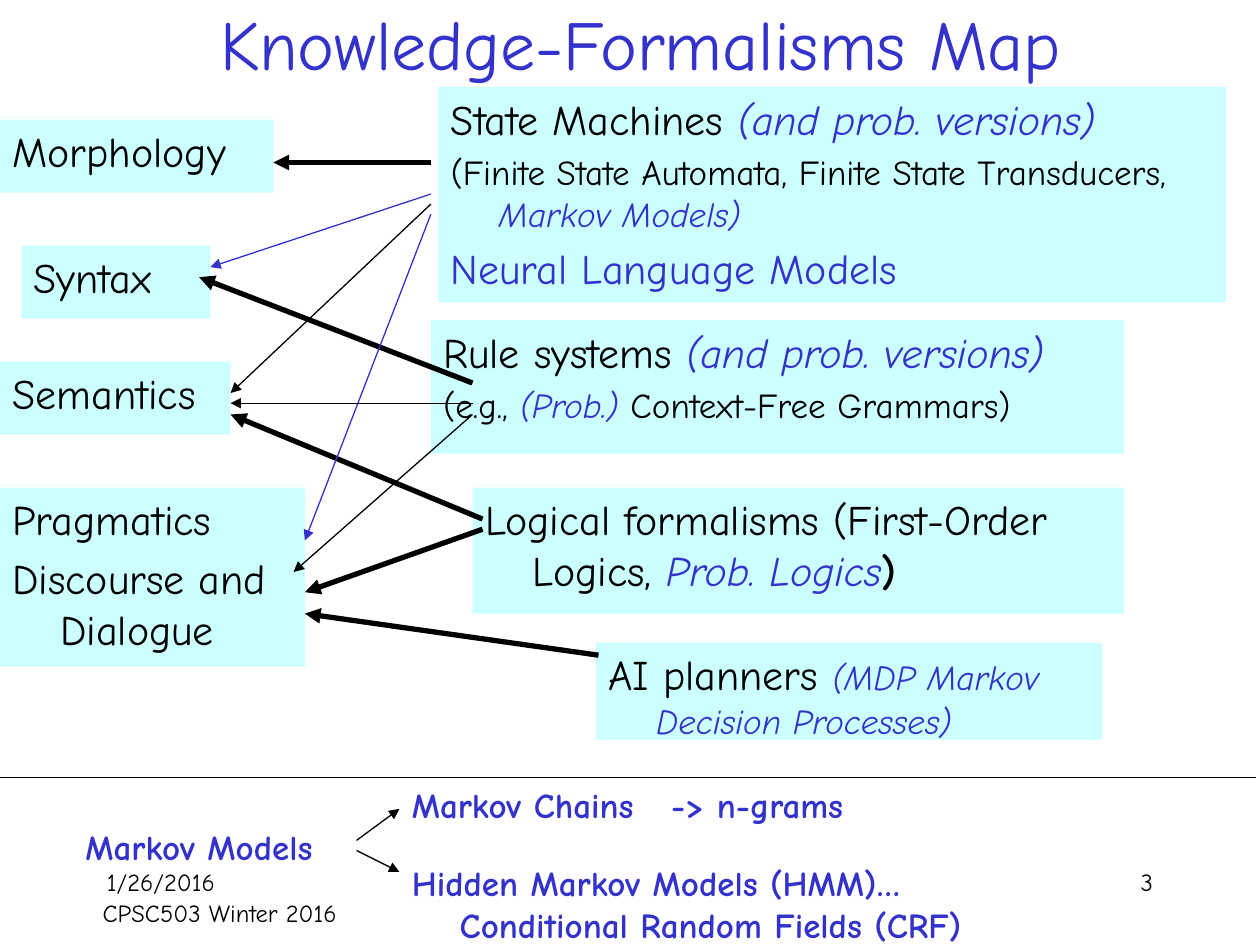
from typing import NamedTuple

from lxml import etree
from pptx import Presentation
from pptx.dml.color import RGBColor
from pptx.enum.shapes import MSO_CONNECTOR, MSO_SHAPE
from pptx.enum.text import MSO_ANCHOR, MSO_AUTO_SIZE, PP_ALIGN
from pptx.oxml.ns import qn
from pptx.util import Inches, Pt

LINE = MSO_CONNECTOR.STRAIGHT
RECT = MSO_SHAPE.RECTANGLE
TOP, BOTTOM = MSO_ANCHOR.TOP, MSO_ANCHOR.BOTTOM
NO_FIT = MSO_AUTO_SIZE.NONE
LEFT, CENTER, RIGHT = PP_ALIGN.LEFT, PP_ALIGN.CENTER, PP_ALIGN.RIGHT

BLACK = RGBColor(0x00, 0x00, 0x00)
BLUE = RGBColor(0x33, 0x33, 0xCC)
CYAN = RGBColor(0xCC, 0xFF, 0xFF)
FONT = "Comic Neue"
HANG = Inches(0.38)
THIN, THICK = 0.75, 3


class Run(NamedTuple):
    text: str
    size: float = 24
    color: RGBColor = BLACK
    italic: bool = False
    bold: bool = False


class Box(NamedTuple):
    at: tuple
    paras: list


class Label(NamedTuple):
    at: tuple
    text: str
    align: PP_ALIGN


class Arrow(NamedTuple):
    start: tuple
    end: tuple
    width: float = THIN
    color: RGBColor = BLACK
    head: bool = True


def tilt(text: str, size: float = 24) -> Run:
    """Blue italic run."""
    return Run(text, size, BLUE, italic=True)


LOGIC = Box((3.75, 3.87, 5.17, 1), [
    [Run("Logical formalisms (First-Order Logics, "), tilt("Prob. Logics"),
     Run(")", bold=True)]])

BOXES = [
    Box((3.42, 2.54, 5.5, 1.06), [
        [Run("Rule systems "), tilt("(and prob. versions)")],
        [Run("(e.g., ", 20), tilt("(Prob.)", 20),
         Run(" Context-Free Grammars)", 20)]]),
    Box((3.48, 0.69, 6.25, 1.71), [
        [Run("State Machines "), tilt("(and prob. versions)")],
        [Run("(Finite State Automata, Finite State Transducers, ", 20),
         tilt("Markov Models)", 20)],
        [Run("Neural Language Models", color=BLUE)]]),
    Box((0, 0.95, 2.17, 0.58), [[Run("Morphology")]]),
    Box((0.17, 1.95, 1.5, 0.58), [[Run("Syntax")]]),
    Box((0, 3.87, 2.42, 1.42), [
        [Run("Pragmatics")], [Run("Discourse and Dialogue")]]),
    Box((0, 2.87, 1.83, 0.58), [[Run("Semantics")]]),
    Box((4.73, 5.1, 4.02, 0.77), [
        [Run("AI planners "), tilt("(MDP Markov Decision Processes)", 20)]]),
]

NOTES = [
    Box(at, [[Run(text, 20, BLUE, bold=True)]]) for at, text in [
        ((0.58, 6.5, 2.33, 0.58), "Markov Models"),
        ((3.17, 6.17, 4.75, 0.58), "Markov Chains   -> n-grams"),
        ((3.17, 6.79, 5.08, 0.58),
         "Hidden Markov Models (HMM)… Conditional Random Fields (CRF)"),
    ]
]

LABELS = [
    Label((0.75, 6.83, 2.08, 0.5), "1/26/2016", LEFT),
    Label((0.16, 7.08, 3.17, 0.5), "CPSC503 Winter 2016", CENTER),
    Label((7.17, 6.83, 2.08, 0.5), "3", RIGHT),
]

ARROWS = [
    Arrow((3.42, 1.29), (2.17, 1.29), THICK),
    Arrow((3.75, 3.04), (1.58, 2.2), THICK),
    Arrow((3.83, 4.12), (1.83, 3.29), THICK),
    Arrow((3.83, 4.2), (2.42, 4.7), THICK),
    Arrow((4.75, 5.2), (2.42, 4.87), THICK),
    Arrow((3.42, 1.62), (1.83, 3.12)),
    Arrow((3.42, 1.7), (2.42, 4.29), color=BLUE),
    Arrow((3.42, 1.54), (1.67, 2.12), color=BLUE),
    Arrow((3.75, 3.2), (1.83, 3.2)),
    Arrow((3.75, 3.29), (2.33, 4.54)),
    Arrow((2.83, 6.67), (3.17, 6.42)),
    Arrow((2.83, 6.75), (3.17, 6.92)),
    Arrow((-0.03, 6.17), (9.97, 6.17), head=False),
]


def put(item, values: dict) -> None:
    """Set each named attribute of the item."""
    for name, value in values.items():
        setattr(item, name, value)


def place(shape, at: tuple) -> None:
    names = ("left", "top", "width", "height")
    put(shape, dict(zip(names, map(Inches, at))))


def write(shape, paras: list, align: PP_ALIGN = LEFT,
          hang: bool = False, anchor: MSO_ANCHOR = TOP) -> None:
    frame = shape.text_frame
    put(frame, {"word_wrap": True, "auto_size": NO_FIT,
                "vertical_anchor": anchor})
    for i, runs in enumerate(paras):
        para = frame.add_paragraph() if i else frame.paragraphs[0]
        para.alignment = align
        if hang:
            para.space_before = Pt(0.2 * runs[0].size)
            props = para._p.get_or_add_pPr()
            props.set("marL", str(HANG))
            props.set("indent", str(-HANG))
            etree.SubElement(props, qn("a:buNone"))
        for run in runs:
            part = para.add_run()
            part.text = run.text
            put(part.font, {"name": FONT, "size": Pt(run.size),
                            "italic": run.italic, "bold": run.bold})
            part.font.color.rgb = run.color


def paint(shape, box: Box) -> None:
    """Fill a shape with cyan and write its text."""
    shape.fill.solid()
    shape.fill.fore_color.rgb = CYAN
    shape.line.fill.background()
    write(shape, box.paras, hang=True)


def draw_arrow(shapes, arrow: Arrow) -> None:
    ends = map(Inches, arrow.start + arrow.end)
    link = shapes.add_connector(LINE, *ends)
    link.line.width = Pt(arrow.width)
    link.line.color.rgb = arrow.color
    if arrow.head:
        etree.SubElement(link.line._get_or_add_ln(), qn("a:tailEnd"),
                         type="triangle")
    etree.SubElement(link._element.spPr, qn("a:effectLst"))


def main() -> None:
    deck = Presentation()
    put(deck, {"slide_width": Inches(10), "slide_height": Inches(7.5)})
    slide = deck.slides.add_slide(deck.slide_layouts[1])
    shapes = slide.shapes

    title, body = shapes.title, slide.placeholders[1]
    place(title, (1, 0.25, 8.17, 0.67))
    put(title.text_frame, {"margin_top": 0, "margin_bottom": Inches(0.25)})
    write(title, [[Run("Knowledge-Formalisms Map", 40, BLUE)]], CENTER,
          anchor=BOTTOM)
    place(body, LOGIC.at)
    paint(body, LOGIC)

    for box in BOXES:
        shape = shapes.add_shape(RECT, *map(Inches, box.at))
        shape.shadow.inherit = False
        paint(shape, box)
    for arrow in ARROWS:
        draw_arrow(shapes, arrow)
    for note in NOTES:
        text = shapes.add_textbox(*map(Inches, note.at))
        write(text, note.paras, hang=True)
    for label in LABELS:
        text = shapes.add_textbox(*map(Inches, label.at))
        write(text, [[Run(label.text, 14)]], label.align)

    deck.save("out.pptx")


if __name__ == "__main__":
    main()
